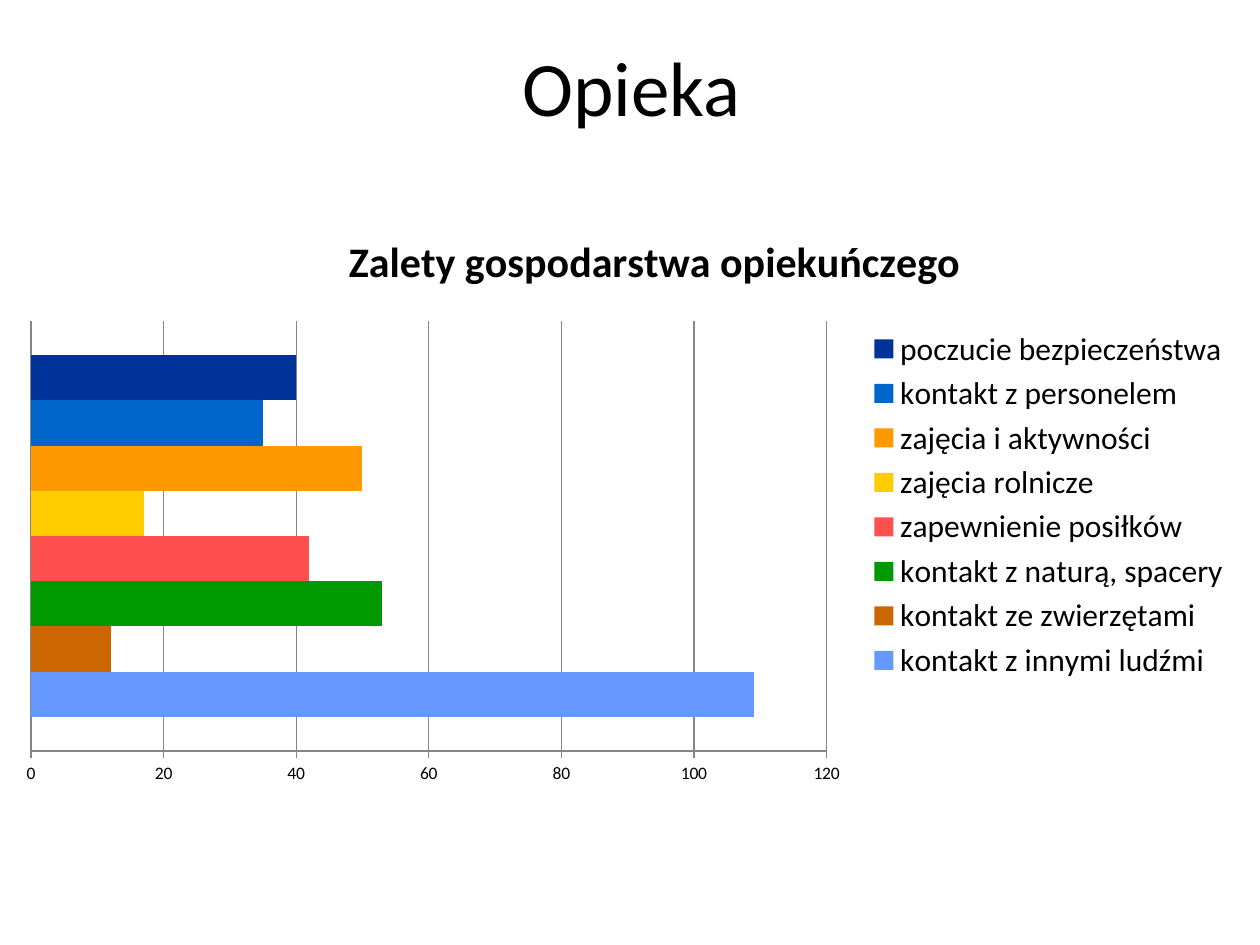
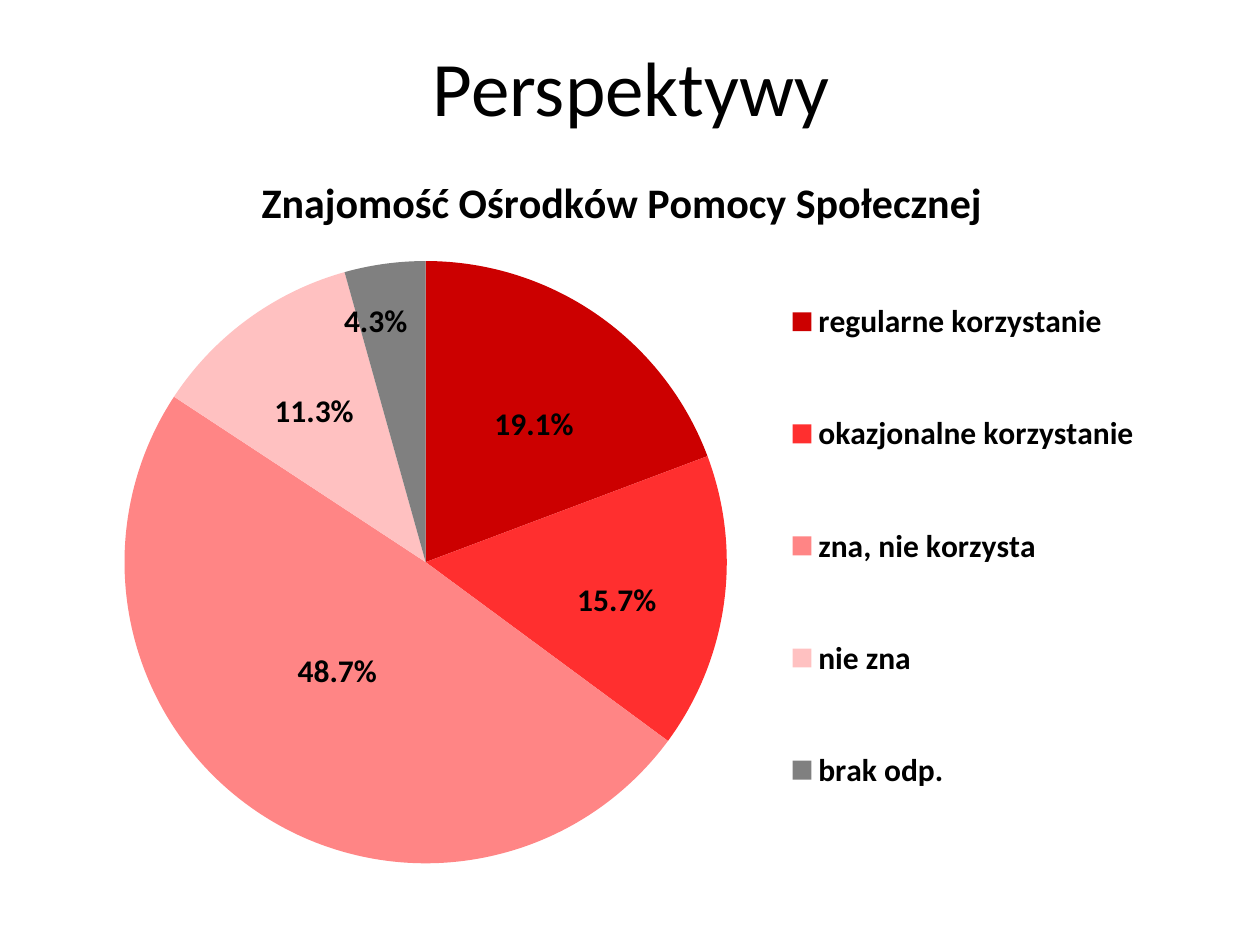
from dataclasses import dataclass
from typing import Any

from lxml.etree import SubElement
from pptx import Presentation
from pptx.chart.data import CategoryChartData as Data
from pptx.dml.color import RGBColor
from pptx.enum.chart import XL_CHART_TYPE as Kind
from pptx.enum.chart import XL_LABEL_POSITION as Place
from pptx.enum.chart import XL_LEGEND_POSITION as Side
from pptx.enum.chart import XL_TICK_MARK as Tick
from pptx.enum.text import MSO_ANCHOR as Anchor
from pptx.enum.text import PP_ALIGN as Align
from pptx.oxml.ns import qn
from pptx.util import Cm, Pt

FONT = "Calibri"
COLORS = {
    "text": "000000", "grid": "868686",
    "sky": "6699FF", "brown": "CC6600", "green": "009900", "coral": "FF5050",
    "yellow": "FFCC00", "orange": "FF9900", "blue": "0066CC", "navy": "003399",
    "crimson": "CC0000", "red": "FF2F2F", "salmon": "FF8585",
    "pink": "FFC1C1", "gray": "808080",
}


@dataclass
class Item:
    """One value; shift moves its label, in percent of the frame."""
    name: str
    value: float
    color: str
    shift: tuple[float, float] = (0, 0)


@dataclass
class Panel:
    """A chart frame in cm; the inner places are percent of that frame."""
    title: str
    box: tuple[float, float, float, float]
    head: tuple[float, float]
    plot: tuple[float, float, float, float]
    key: tuple[float, float, float, float]
    bold: bool


CARE = Panel("Zalety gospodarstwa opiekuńczego", (0.05, 4.32, 25.02, 11.71),
             (27.3, 2), (2.3, 18.4, 64.1, 74), (69.8, 18.8, 29, 62.4), False)
CARE_ITEMS = [
    Item("kontakt z innymi ludźmi", 109, "sky"),
    Item("kontakt ze zwierzętami", 12, "brown"),
    Item("kontakt z naturą, spacery", 53, "green"),
    Item("zapewnienie posiłków", 42, "coral"),
    Item("zajęcia rolnicze", 17, "yellow"),
    Item("zajęcia i aktywności", 50, "orange"),
    Item("kontakt z personelem", 35, "blue"),
    Item("poczucie bezpieczeństwa", 40, "navy"),
]
AID = Panel("Znajomość Ośrodków Pomocy Społecznej", (1.09, 2.92, 22.91, 14.96),
            (17.6, 2.9), (6.2, 14.7, 53, 83.1), (64, 11.3, 32, 85.5), True)
AID_ITEMS = [
    Item("regularne korzystanie", 0.191, "crimson", (2, -1.9)),
    Item("okazjonalne korzystanie", 0.157, "red", (3.7, 2.4)),
    Item("zna, nie korzysta", 0.487, "salmon", (-0.2, -2)),
    Item("nie zna", 0.113, "pink", (-2, -4)),
    Item("brak odp.", 0.043, "gray", (-2.6, -12.3)),
]


def tint(name: str) -> RGBColor:
    return RGBColor.from_string(COLORS[name])


def style(font: Any, size: float, bold: bool = False) -> None:
    font.name, font.size, font.bold = FONT, Pt(size), bold
    font.color.rgb = tint("text")


def paint(part: Any, color: str) -> None:
    part.format.fill.solid()
    part.format.fill.fore_color.rgb = tint(color)


def lay(node: Any, spot: tuple[float, ...], index: int = 1,
        inner: bool = False, edge: bool = True) -> None:
    """Give a chart part a manual layout as its child number index."""
    for old in node.findall(qn("c:layout")):
        node.remove(old)
    layout = SubElement(node, qn("c:layout"))
    node.insert(index, layout)
    manual = SubElement(layout, qn("c:manualLayout"))
    rows = [("layoutTarget", "inner")] if inner else []
    if edge:
        rows += [("xMode", "edge"), ("yMode", "edge")]
    rows += [(tag, f"{value / 100:.3f}") for tag, value in zip("xywh", spot)]
    for tag, value in rows:
        SubElement(manual, qn(f"c:{tag}")).set("val", value)


def add_title(slide: Any, text: str) -> None:
    frame = slide.shapes.add_textbox(Cm(1.3), Cm(0.53), Cm(22.86), Cm(2.41)).text_frame
    frame.word_wrap = True
    frame.vertical_anchor = Anchor.MIDDLE
    line = frame.paragraphs[0]
    line.text, line.alignment = text, Align.CENTER
    style(line.font, 44)


def add_panel(slide: Any, panel: Panel, kind: Any, data: Data) -> Any:
    box = [Cm(side) for side in panel.box]
    chart = slide.shapes.add_chart(kind, *box, data).chart
    style(chart.font, 10)
    chart.has_title = True
    line = chart.chart_title.text_frame.paragraphs[0]
    line.text = panel.title
    style(line.font, 24, True)
    chart.has_legend = True
    legend = chart.legend
    legend.position, legend.include_in_layout = Side.RIGHT, False
    style(legend.font, 18, panel.bold)
    root = chart.element.find(qn("c:chart"))
    lay(root.find(qn("c:title")), panel.head)
    lay(root.find(qn("c:legend")), panel.key)
    lay(root.find(qn("c:plotArea")), panel.plot, 0, inner=True)
    return chart


def draw_care(slide: Any) -> None:
    data = Data()
    data.categories = ["1"]
    for item in CARE_ITEMS:
        data.add_series(item.name, [item.value])
    chart = add_panel(slide, CARE, Kind.BAR_CLUSTERED, data)
    plot = chart.plots[0]
    plot.gap_width, plot.vary_by_categories = 150, False
    for bar, item in zip(plot.series, CARE_ITEMS):
        paint(bar, item.color)
    chart.category_axis.visible = False
    axis = chart.value_axis
    axis.minimum_scale, axis.maximum_scale, axis.major_unit = 0, 120, 20
    axis.major_tick_mark = Tick.OUTSIDE
    style(axis.tick_labels.font, 10)
    for rule in (axis, axis.major_gridlines):
        rule.format.line.color.rgb = tint("grid")
        rule.format.line.width = Pt(0.75)


def draw_aid(slide: Any) -> None:
    data = Data(number_format="0.0%")
    data.categories = [item.name for item in AID_ITEMS]
    data.add_series("Series 1", [item.value for item in AID_ITEMS])
    chart = add_panel(slide, AID, Kind.PIE, data)
    plot = chart.plots[0]
    plot.vary_by_categories = True
    pie = plot.series[0]
    labels = pie.data_labels
    labels.show_value, labels.position = True, Place.CENTER
    labels.number_format, labels.number_format_is_linked = "0.0%", False
    style(labels.font, 18, True)
    for index, item in enumerate(AID_ITEMS):
        point = pie.points[index]
        paint(point, item.color)
        style(point.data_label.font, 18, True)
        point.data_label.position = Place.CENTER
    for node, item in zip(pie.data_labels._element.findall(qn("c:dLbl")), AID_ITEMS):
        lay(node, item.shift, edge=False)
        form = SubElement(node, qn("c:numFmt"), formatCode="0.0%", sourceLinked="0")
        node.insert(2, form)


def main() -> None:
    deck = Presentation()
    deck.slide_width, deck.slide_height = Cm(25.4), Cm(19.05)
    for title, draw in (("Opieka", draw_care), ("Perspektywy", draw_aid)):
        slide = deck.slides.add_slide(deck.slide_layouts[6])
        add_title(slide, title)
        draw(slide)
    deck.save("out.pptx")


if __name__ == "__main__":
    main()
